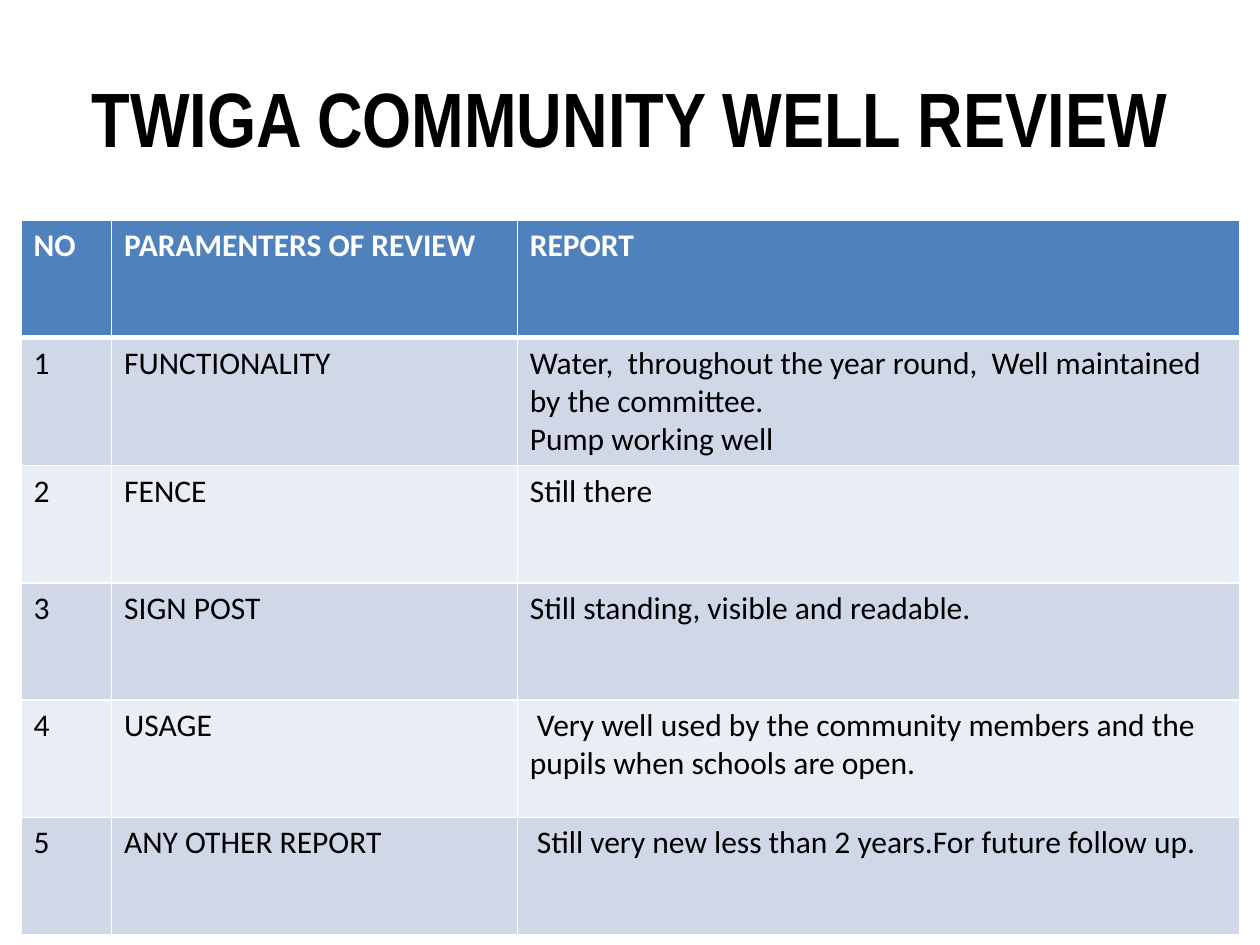
from lxml.etree import SubElement
from pptx import Presentation
from pptx.dml.color import RGBColor
from pptx.enum.text import MSO_ANCHOR, PP_ALIGN
from pptx.oxml.ns import qn
from pptx.util import Pt

COLORS = {"black": "000000", "white": "FFFFFF", "header": "4F81BD",
          "odd": "D0D8E8", "even": "E9EDF4"}
TITLE_FONT = {"name": "Arial Narrow", "size": Pt(44), "bold": True}
HEADER_FONT = {"name": "Calibri", "size": Pt(18), "bold": True}
BODY_FONT = {**HEADER_FONT, "bold": False}

COLUMN_WIDTHS = [51.8, 231.8, 412.6]
ROW_HEIGHT = 67
ROWS = [
    ["NO", "PARAMENTERS OF REVIEW", "REPORT"],
    ["1", "FUNCTIONALITY",
     "Water,  throughout the year round,  Well maintained by the committee.\n"
     "Pump working well"],
    ["2", "FENCE", "Still there"],
    ["3", "SIGN POST", "Still standing, visible and readable."],
    ["4", "USAGE",
     " Very well used by the community members and the pupils when schools are open."],
    ["5", "ANY OTHER REPORT",
     " Still very new less than 2 years.For future follow up."],
]


def format_text(frame, font_values, color):
    for para in frame.paragraphs:
        for span in para.runs:
            for name, value in font_values.items():
                setattr(span.font, name, value)
            span.font.color.rgb = RGBColor.from_string(COLORS[color])


def add_title(page, left, top, width, height):
    title = page.shapes.title
    place = {"left": left, "top": top, "width": width, "height": height}
    for name, value in place.items():
        setattr(title, name, Pt(value))
    frame = title.text_frame
    frame.text = "TWIGA COMMUNITY WELL REVIEW"
    frame.vertical_anchor = MSO_ANCHOR.MIDDLE
    frame.paragraphs[0].alignment = PP_ALIGN.CENTER
    format_text(frame, TITLE_FONT, "black")


def set_borders(cell, row_index):
    """Draw thin white borders, with a thick one under the header row."""
    widths = {"lnL": 1, "lnR": 1,
              "lnT": 3 if row_index == 1 else 1,
              "lnB": 3 if row_index == 0 else 1}
    properties = cell._tc.get_or_add_tcPr()
    for tag, width in widths.items():
        line = SubElement(properties, qn(f"a:{tag}"), w=str(Pt(width)))
        fill = SubElement(line, qn("a:solidFill"))
        SubElement(fill, qn("a:srgbClr"), val=COLORS["white"])


def add_review_table(page, left, top):
    table = page.shapes.add_table(
        len(ROWS), len(COLUMN_WIDTHS), Pt(left), Pt(top),
        Pt(sum(COLUMN_WIDTHS)), Pt(ROW_HEIGHT * len(ROWS))).table
    for column, width in zip(table.columns, COLUMN_WIDTHS):
        column.width = Pt(width)
    for row_index, texts in enumerate(ROWS):
        table.rows[row_index].height = Pt(ROW_HEIGHT)
        is_header = row_index == 0
        fill = "header" if is_header else "odd" if row_index % 2 else "even"
        for column_index, text in enumerate(texts):
            cell = table.cell(row_index, column_index)
            cell.text_frame.text = text
            set_borders(cell, row_index)
            cell.fill.solid()
            cell.fill.fore_color.rgb = RGBColor.from_string(COLORS[fill])
            format_text(cell.text_frame,
                        HEADER_FONT if is_header else BODY_FONT,
                        "white" if is_header else "black")


def main():
    deck = Presentation()
    deck.slide_width, deck.slide_height = Pt(720), Pt(540)
    page = deck.slides.add_slide(deck.slide_layouts[5])
    add_title(page, 36, 21.6, 648, 90)
    add_review_table(page, 12, 126)
    deck.save("out.pptx")


if __name__ == "__main__":
    main()
